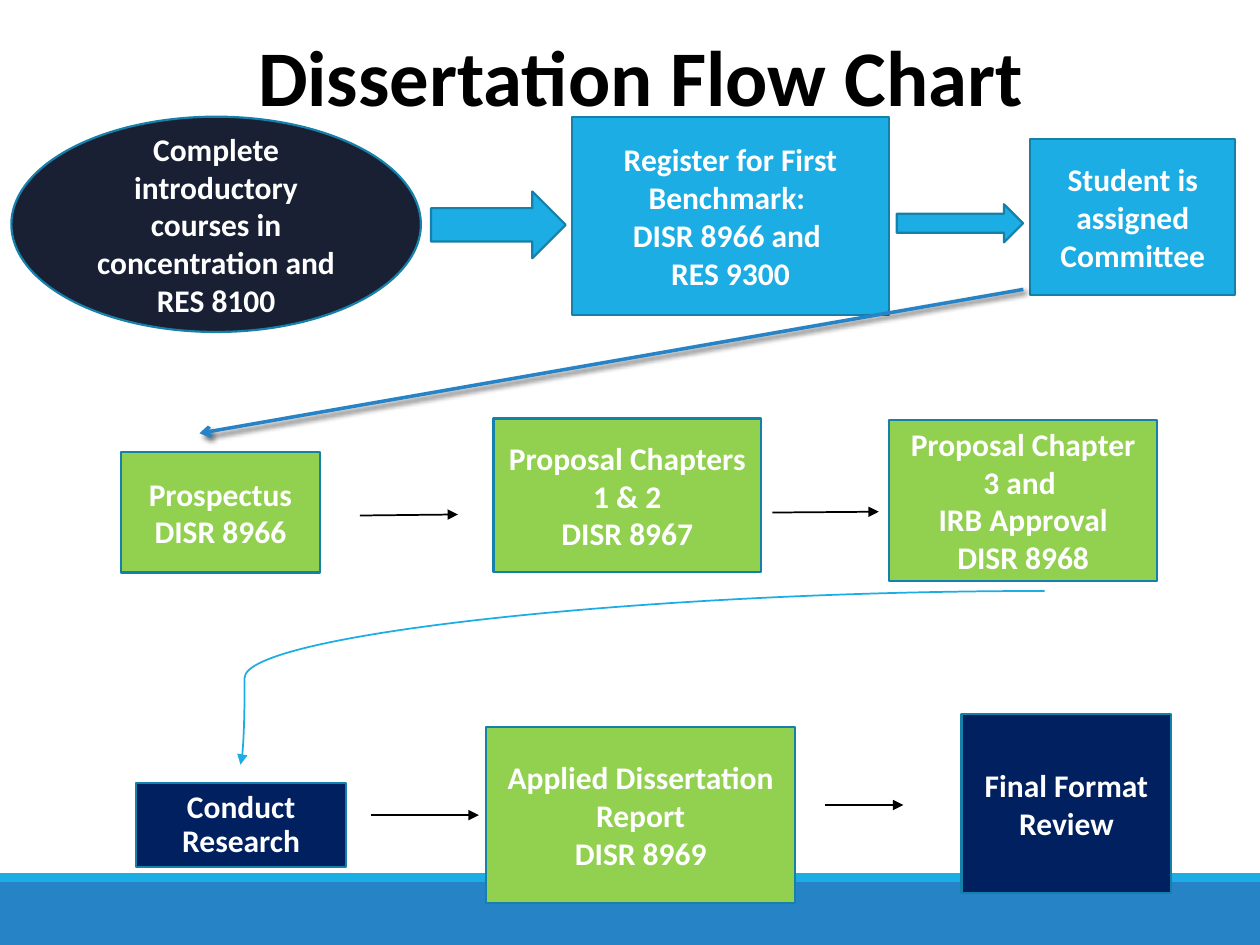
from lxml import etree
from pptx import Presentation
from pptx.dml import color
from pptx.enum import shapes, text
from pptx.oxml import ns
from pptx.util import Pt

SKY, EDGE, NAVY, GREEN, BLUE = "1CADE4", "1580A9", "002060", "92D050", "2683C6"
BLACK, WHITE, MIDNIGHT = "000000", "FFFFFF", "1A2034"
RECT = shapes.MSO_SHAPE.RECTANGLE


def paint(target, value):
    if hasattr(target, "solid"):
        target.solid()
        target = target.fore_color
    target.rgb = color.RGBColor.from_string(value)


def add_block(kind, place, fill, edge=None):
    block = slide.shapes.add_shape(kind, *[Pt(value) for value in place])
    block.shadow.inherit = False
    paint(block.fill, fill)
    if edge:
        paint(block.line.fill, edge)
        block.line.width = Pt(1.25)
    else:
        block.line.fill.background()
    return block


deck = Presentation()
deck.slide_width, deck.slide_height = Pt(720), Pt(540)
slide = deck.slides.add_slide(deck.slide_layouts[5])

add_block(RECT, (0, 504, 720, 36), BLUE)
add_block(RECT, (0, 499, 720, 5), SKY)

heading = slide.shapes.title
heading.left, heading.top, heading.width, heading.height = Pt(60), Pt(12.5), Pt(612), Pt(90)
heading.text_frame.text = "Dissertation Flow Chart"
heading.text_frame.auto_size = text.MSO_AUTO_SIZE.NONE
heading.text_frame.vertical_anchor = text.MSO_ANCHOR.TOP
heading.text_frame.paragraphs[0].alignment = text.PP_ALIGN.CENTER
heading_font = heading.text_frame.paragraphs[0].runs[0].font
heading_font.name, heading_font.size, heading_font.bold = "Calibri", Pt(45), True
paint(heading_font.color, BLACK)

steps = [
    (shapes.MSO_SHAPE.OVAL, (6.5, 66.7, 234, 123), MIDNIGHT, 1,
     "Complete introductory courses in concentration and RES 8100"),
    (RECT, (326.7, 66.7, 181.6, 113.3), SKY, 1,
     "Register for First Benchmark: \nDISR 8966 and \vRES 9300"),
    (RECT, (588.7, 79.6, 117.2, 88.8), SKY, 1, "Student is assigned Committee"),
    (RECT, (69, 258.4, 114, 68.8), GREEN, 1, "Prospectus\nDISR 8966"),
    (RECT, (282, 239.2, 153, 87.8), GREEN, 1, "Proposal Chapters 1 & 2\nDISR 8967"),
    (RECT, (508.2, 240, 153, 92), GREEN, 1,
     "Proposal Chapter 3 and \nIRB Approval\nDISR 8968"),
    (RECT, (77.8, 447.6, 120, 48), NAVY, 0.9, "Conduct\nResearch"),
    (RECT, (277.9, 415.4, 176.4, 100.8), GREEN, 1,
     "Applied Dissertation Report\nDISR 8969"),
    (RECT, (549.4, 408.2, 120, 102), NAVY, 1, "Final Format\nReview"),
]
for kind, place, fill, spacing, wording in steps:
    words = add_block(kind, place, fill, EDGE).text_frame
    words.word_wrap = True
    words.vertical_anchor = text.MSO_ANCHOR.MIDDLE
    words.text = wording
    for paragraph in words.paragraphs:
        paragraph.alignment = text.PP_ALIGN.CENTER
        paragraph.line_spacing = spacing
        for run in paragraph.runs:
            run.font.name, run.font.size, run.font.bold = "Calibri", Pt(18), True
            paint(run.font.color, WHITE)

to_benchmark = add_block(shapes.MSO_SHAPE.DOWN_ARROW, (265.7, 90, 38.2, 77), SKY, EDGE)
to_benchmark.rotation = 270
add_block(shapes.MSO_SHAPE.RIGHT_ARROW, (512.4, 116.7, 72.2, 21.8), SKY, EDGE)

STRAIGHT, CURVE = shapes.MSO_CONNECTOR.STRAIGHT, shapes.MSO_CONNECTOR.CURVE
links = [
    (STRAIGHT, (584.8, 165.4, 114, 247.6), BLUE, 2, "arrow"),
    (STRAIGHT, (205.7, 294.6, 261.7, 294), BLACK, 1, "triangle"),
    (STRAIGHT, (441.4, 292.9, 502.2, 292.4), BLACK, 1, "triangle"),
    (STRAIGHT, (212.2, 465.8, 273.6, 465.8), BLACK, 1, "triangle"),
    (STRAIGHT, (471.6, 460, 516.2, 460), BLACK, 1, "triangle"),
    (CURVE, (597, 337.7, 137.5, 437), SKY, 1, "triangle"),
]
for kind, ends, stroke, weight, head in links:
    link = slide.shapes.add_connector(kind, *[Pt(value) for value in ends])
    paint(link.line.fill, stroke)
    link.line.width = Pt(weight)
    etree.SubElement(link.line._get_or_add_ln(), ns.qn("a:tailEnd"), type=head)
    properties = link._element.spPr
    effects = etree.SubElement(properties, ns.qn("a:effectLst"))
    if head == "arrow":
        shadow = etree.SubElement(effects, ns.qn("a:outerShdw"), blurRad=str(Pt(3)),
                                  dist=str(Pt(2)), dir="2700000", rotWithShape="0")
        shade = etree.SubElement(shadow, ns.qn("a:srgbClr"), val=BLACK)
        etree.SubElement(shade, ns.qn("a:alpha"), val="60000")
    if kind == CURVE:
        guides = properties.find(ns.qn("a:prstGeom")).find(ns.qn("a:avLst"))
        etree.SubElement(guides, ns.qn("a:gd"), name="adj1", fmla="val 99500")

deck.save("out.pptx")
